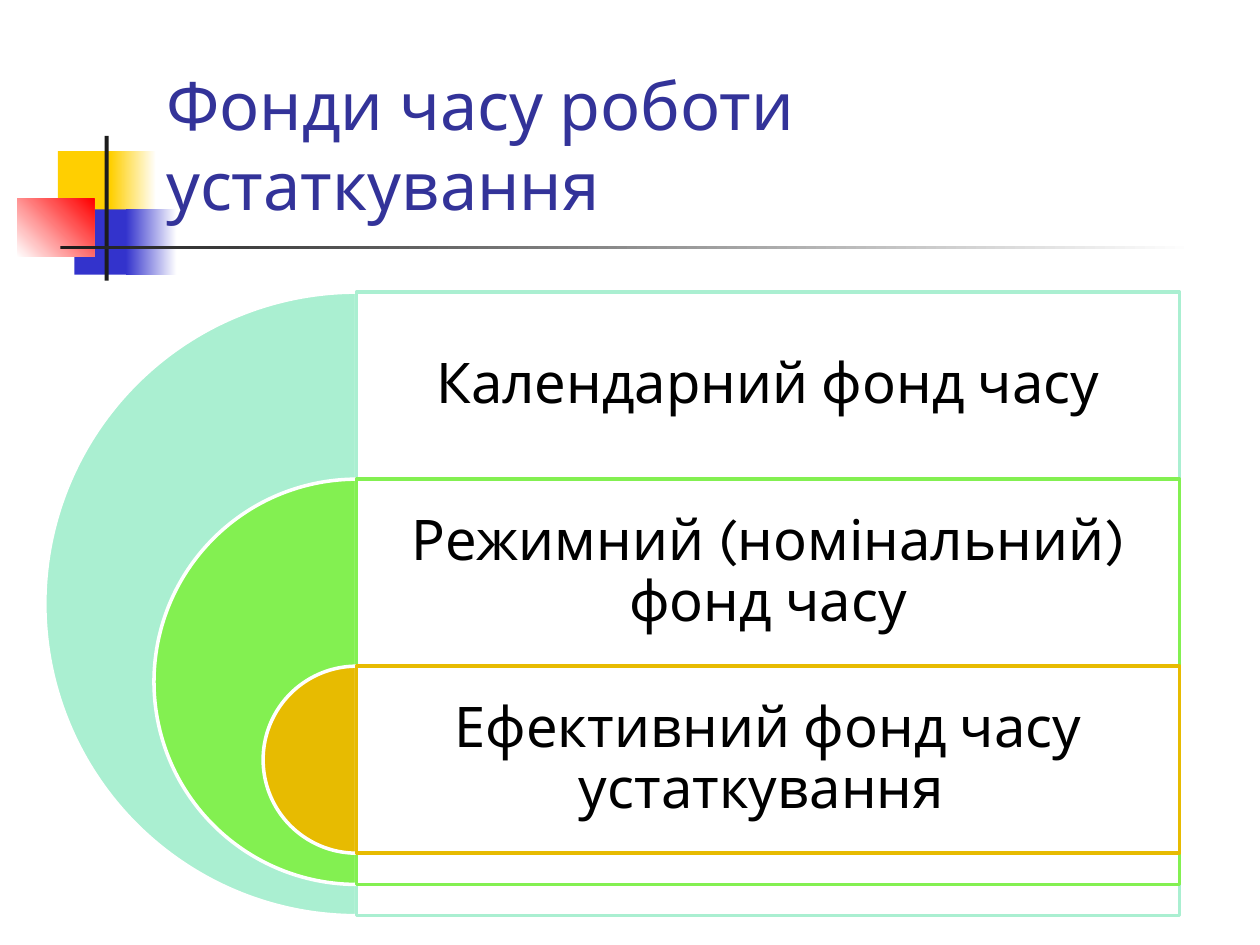
from pptx import Presentation
from pptx.dml.color import RGBColor as Rgb
from pptx.enum.shapes import MSO_SHAPE as Kind
from pptx.enum.text import MSO_ANCHOR as Anchor, PP_ALIGN as Align
from pptx.util import Cm, Pt
from lxml.etree import SubElement as Sub

TITLE = "Фонди часу роботи устаткування"
FUNDS = [
    ("Календарний фонд часу", "mint"),
    ("Режимний (номінальний) фонд часу", "green"),
    ("Ефективний фонд часу устаткування ", "amber"),
]
DECOR = [
    ((1.17, 3.05, 1.22, 1.32), ("yellow",), 0),
    ((2.23, 3.05, 0.92, 1.32), ("yellow", "white"), 0),
    ((1.5, 4.22, 1.17, 1.32), ("blue",), 0),
    ((2.54, 4.22, 1.02, 1.32), ("blue", "white"), 0),
    ((0.35, 4.01, 1.55, 1.17), ("white", "red"), 45),
    ((2.11, 2.74, 0.08, 2.92), ("dark",), 0),
    ((1.22, 4.95, 22.86, 0.08), ("dark", "white"), 0),
]
THEME = {
    "font": "Karla", "title": 38, "body": 32, "line": 2,
    "white": "FFFFFF", "black": "000000", "dark": "1C1C1C", "navy": "333399",
    "yellow": "FFCF01", "blue": "3333CC", "red": "FF0000",
    "mint": "AAEFD1", "green": "83F051", "amber": "E7BB01",
}
MID, TOP, ROW, WIDE = 7.19, 5.89, 3.77, 16.59
DIAM, SHRINK = 12.57, 4.4


def hue(name):
    """Return a theme colour."""
    return Rgb.from_string(THEME[name])


def draw(slide, kind, box, fill, edge=None, angle=0):
    """Add a shape with a plain or gradient fill."""
    shape = slide.shapes.add_shape(kind, *map(Cm, box))
    shape.shadow.inherit = False
    if len(fill) == 1:
        shape.fill.solid()
        shape.fill.fore_color.rgb = hue(fill[0])
    else:
        shape.fill.gradient()
        shape.fill.gradient_angle = angle
        for stop, name, spot in zip(shape.fill.gradient_stops, fill, (0, 1)):
            stop.color.rgb = hue(name)
            stop.position = spot
    if edge:
        shape.line.color.rgb = hue(edge)
        shape.line.width = Pt(THEME["line"])
    else:
        shape.line.fill.background()
    return shape


def fade(shape, share):
    """Set the opacity of a solid fill in percent."""
    tint = shape.fill._xPr.solidFill[0]
    space = tint.tag.split("}")[0]
    Sub(tint, space + "}alpha", val=str(share * 1000))


def write(slide, box, text, size, color, anchor, align, pad):
    """Add a wrapped text box."""
    frame = slide.shapes.add_textbox(*map(Cm, box)).text_frame
    frame.word_wrap = True
    frame.vertical_anchor = anchor
    frame.margin_left = frame.margin_right = Cm(pad[0])
    frame.margin_top = frame.margin_bottom = Cm(pad[1])
    frame.text = text
    para = frame.paragraphs[0]
    para.alignment = align
    font = para.runs[0].font
    font.name, font.size = THEME["font"], Pt(THEME[size])
    font.color.rgb = hue(color)
    return para


def main():
    """Build the slide."""
    deck = Presentation()
    deck.slide_width, deck.slide_height = Cm(25.4), Cm(19.05)
    slide = deck.slides.add_slide(deck.slide_layouts[6])
    for box, fill, angle in DECOR:
        draw(slide, Kind.RECTANGLE, box, fill, angle=angle)
    for i, (text, color) in enumerate(FUNDS):
        top, size = TOP + i * ROW, DIAM - i * SHRINK
        pie = draw(slide, Kind.PIE, (MID - size / 2, top, size, size), (color,), "white")
        pie.adjustments[0], pie.adjustments[1] = 54, 162
        panel = draw(slide, Kind.RECTANGLE, (MID, top, WIDE, size), ("white",), color)
        fade(panel, 90)
        para = write(slide, (MID, top, WIDE, ROW), text, "body", "black",
                     Anchor.MIDDLE, Align.CENTER, (0.33, 0.33))
        para.line_spacing = 0.9
    write(slide, (3.1, 0.58, 21.64, 4.06), TITLE, "title", "navy",
          Anchor.BOTTOM, Align.LEFT, (0.25, 0.13))
    deck.save("out.pptx")


if __name__ == "__main__":
    main()
